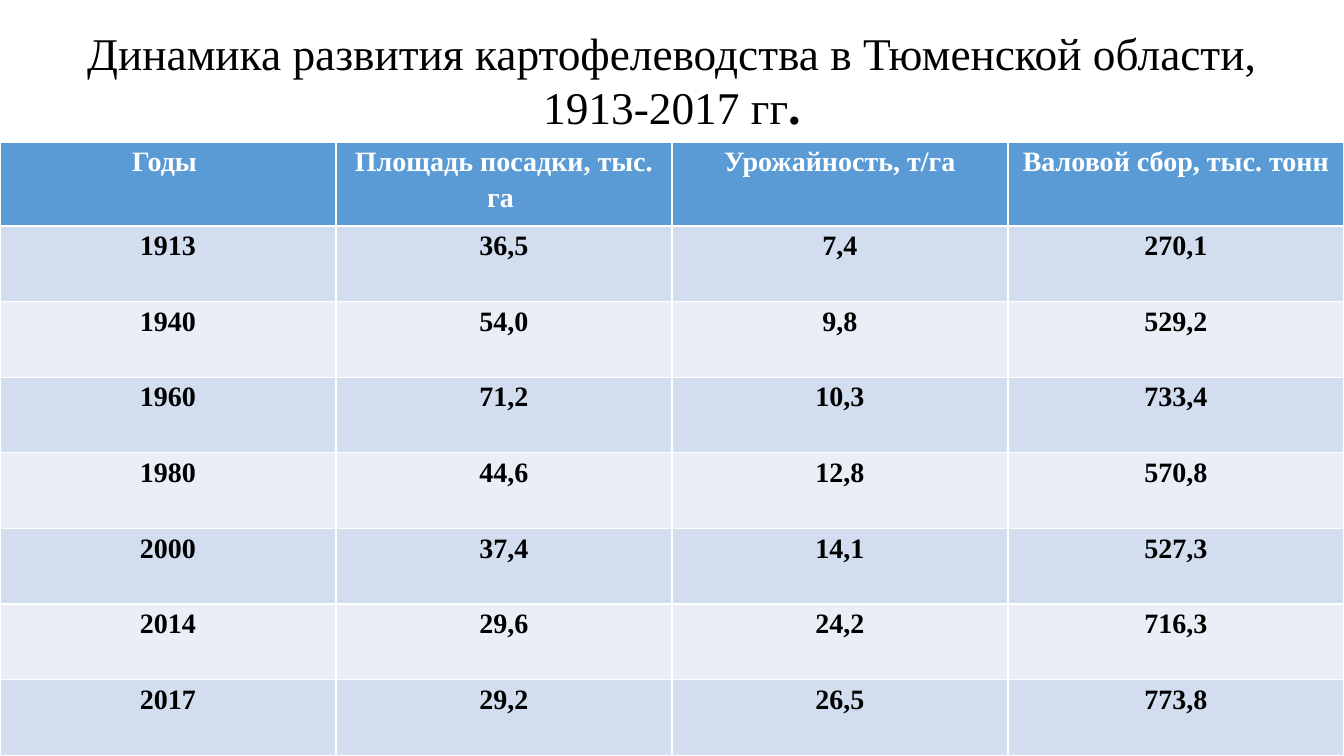
"""Build the slide on potato growing in the Tyumen region."""
from dataclasses import dataclass

from lxml.etree import SubElement
from pptx import Presentation as Deck
from pptx.dml.color import RGBColor as Rgb
from pptx.enum.text import MSO_ANCHOR as Anchor, PP_ALIGN as Align
from pptx.oxml.ns import qn
from pptx.slide import Slide
from pptx.table import _Cell as Cell
from pptx.text.text import _Paragraph as Para
from pptx.util import Pt

FONT = "Times New Roman"
HUES = {
    "head": "5B9BD5",
    "odd": "D2DEEF",
    "even": "EAEFF7",
    "white": "FFFFFF",
    "black": "000000",
}
WIDE, HIGH = 960, 540
TOP, HEAD, ROW = 101.5, 60, 54


@dataclass
class Span:
    """A run of text with its look."""
    text: str
    size: float
    bold: bool = False
    hue: str = "black"


@dataclass
class Year:
    """One line of the table."""
    year: str
    area: str
    rate: str
    crop: str

    def cells(self) -> list[str]:
        """Give the cell texts from left to right."""
        return [self.year, self.area, self.rate, self.crop]


TITLE = [
    Span("Динамика развития картофелеводства в Тюменской области, 1913-2017 гг", 32.4),
    Span(".", 36, True),
]
LINES = [
    Year("Годы ", "Площадь посадки, тыс. га ", "Урожайность, т/га", "Валовой сбор, тыс. тонн"),
    Year("1913", "36,5", "7,4", "270,1"),
    Year("1940", "54,0", "9,8", "529,2"),
    Year("1960", "71,2", "10,3", "733,4"),
    Year("1980", "44,6", "12,8", "570,8"),
    Year("2000", "37,4", "14,1", "527,3"),
    Year("2014", "29,6", "24,2", "716,3"),
    Year("2017", "29,2", "26,5", "773,8"),
]


def write(para: Para, spans: list[Span], pitch: float) -> None:
    """Fill a centred paragraph run by run."""
    para.alignment = Align.CENTER
    para.line_spacing = pitch
    for span in spans:
        run = para.add_run()
        run.text = span.text
        font = run.font
        font.name = FONT
        font.size = Pt(span.size)
        font.bold = span.bold
        font.color.rgb = Rgb.from_string(HUES[span.hue])


def frame(cell: Cell) -> None:
    """Draw thin white borders round a cell."""
    props = cell._tc.get_or_add_tcPr()
    for side in ("a:lnL", "a:lnR", "a:lnT", "a:lnB"):
        line = SubElement(props, qn(side), w=str(Pt(1)))
        fill = SubElement(line, qn("a:solidFill"))
        SubElement(fill, qn("a:srgbClr"), val=HUES["white"])


def style(cell: Cell, text: str, row: int) -> None:
    """Set the text, margins, borders and fill of a cell."""
    cell.margin_left = cell.margin_right = Pt(7.2)
    cell.margin_top = cell.margin_bottom = Pt(0)
    hue = "black" if row else "white"
    write(cell.text_frame.paragraphs[0], [Span(text, 20, True, hue)], 1.15)
    frame(cell)
    band = "head" if row == 0 else "odd" if row % 2 else "even"
    cell.fill.solid()
    cell.fill.fore_color.rgb = Rgb.from_string(HUES[band])


def add_title(slide: Slide) -> None:
    """Place the title above the table."""
    box = slide.shapes.add_textbox(Pt(48), Pt(33.8), Pt(864), Pt(90))
    body = box.text_frame
    body.word_wrap = True
    body.vertical_anchor = Anchor.MIDDLE
    body.margin_bottom = Pt(42)
    write(body.paragraphs[0], TITLE, 0.9)


def add_grid(slide: Slide) -> None:
    """Place the table across the full width."""
    rows, cols = len(LINES), len(LINES[0].cells())
    high = HEAD + ROW * (rows - 1)
    table = slide.shapes.add_table(rows, cols, Pt(0), Pt(TOP), Pt(WIDE), Pt(high)).table
    for col in table.columns:
        col.width = Pt(WIDE / cols)
    for row, line in enumerate(LINES):
        table.rows[row].height = Pt(ROW if row else HEAD)
        for col, text in enumerate(line.cells()):
            style(table.cell(row, col), text, row)


def main() -> None:
    """Make the deck and save it."""
    deck = Deck()
    deck.slide_width, deck.slide_height = Pt(WIDE), Pt(HIGH)
    slide = deck.slides.add_slide(deck.slide_layouts[6])
    add_title(slide)
    add_grid(slide)
    deck.save("out.pptx")


if __name__ == "__main__":
    main()
